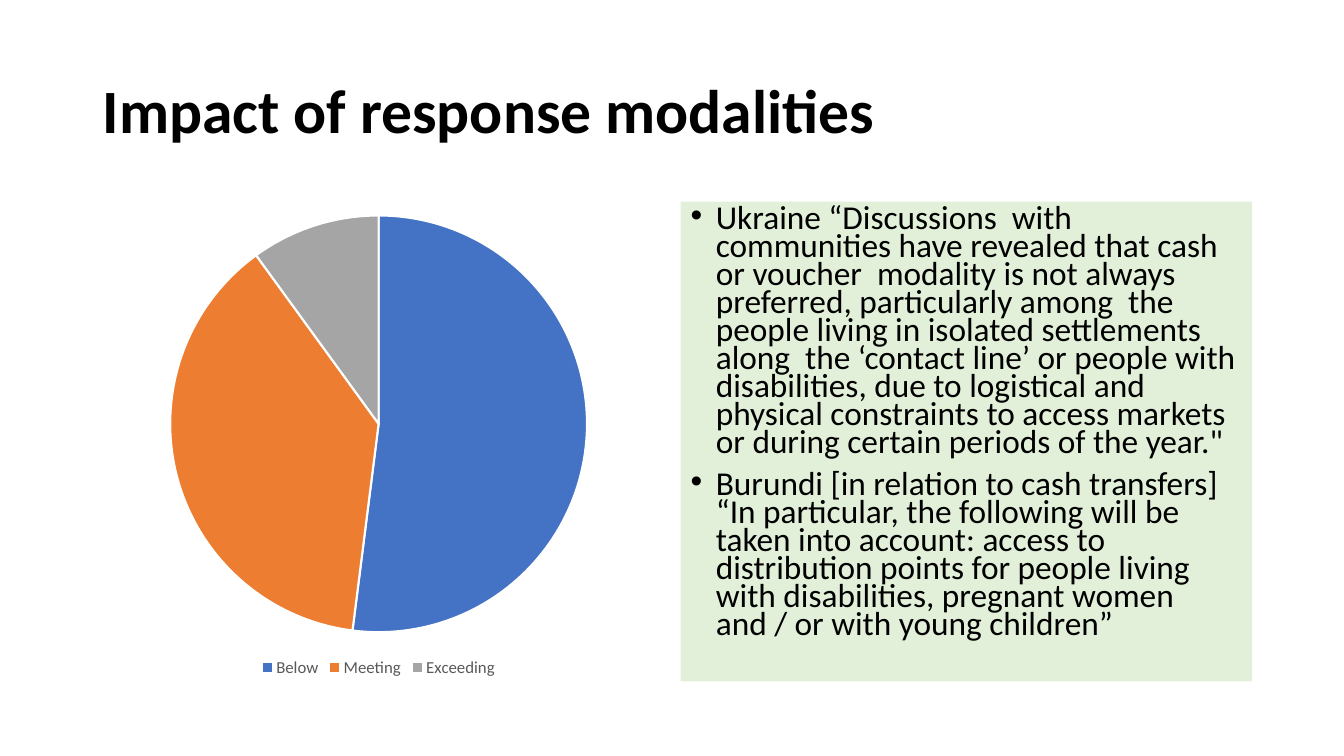
from lxml import etree
from pptx import Presentation
from pptx.chart.data import CategoryChartData
from pptx.dml.color import RGBColor
from pptx.enum.chart import XL_CHART_TYPE, XL_LEGEND_POSITION
from pptx.enum.text import MSO_ANCHOR, MSO_AUTO_SIZE, PP_ALIGN
from pptx.oxml.ns import qn
from pptx.util import Inches, Pt

PIE = XL_CHART_TYPE.PIE
BOTTOM = XL_LEGEND_POSITION.BOTTOM
MIDDLE = MSO_ANCHOR.MIDDLE
TOP = MSO_ANCHOR.TOP
NO_AUTOFIT = MSO_AUTO_SIZE.NONE
LEFT = PP_ALIGN.LEFT

BLACK = RGBColor(0x00, 0x00, 0x00)
WHITE = RGBColor(0xFF, 0xFF, 0xFF)
GREY_TEXT = RGBColor(0x59, 0x59, 0x59)
PALE_GREEN = RGBColor(0xE2, 0xF0, 0xD9)
BLUE = RGBColor(0x44, 0x72, 0xC4)
ORANGE = RGBColor(0xED, 0x7D, 0x31)
GREY = RGBColor(0xA5, 0xA5, 0xA5)
FONT = "Calibri"

RATINGS = [("Below", 52, BLUE), ("Meeting", 38, ORANGE), ("Exceeding", 10, GREY)]
QUOTES = [
    "Ukraine “Discussions  with communities have revealed that cash or voucher  modality "
    "is not always preferred, particularly among  the people living in isolated settlements "
    "along  the ‘contact line’ or people with disabilities, due to logistical and physical "
    "constraints to access markets  or during certain periods of the year.\"",
    "Burundi [in relation to cash transfers] “In particular, the following will be taken "
    "into account: access to distribution points for people living with disabilities, "
    "pregnant women and / or with young children”",
]


def place(shape, left, top, width, height):
    shape.left, shape.top = Inches(left), Inches(top)
    shape.width, shape.height = Inches(width), Inches(height)


def add_text(paragraph, text, size, spacing, bold):
    paragraph.alignment = LEFT
    paragraph.line_spacing = spacing
    run = paragraph.add_run()
    run.text = text
    run.font.name = FONT
    run.font.size = Pt(size)
    run.font.bold = bold
    run.font.color.rgb = BLACK


presentation = Presentation()
presentation.slide_width = Inches(13.33)
presentation.slide_height = Inches(7.5)
slide = presentation.slides.add_slide(presentation.slide_layouts[1])

title = slide.shapes.title
place(title, 0.92, 0.4, 11.5, 1.45)
title.text_frame.auto_size = NO_AUTOFIT
title.text_frame.vertical_anchor = MIDDLE
add_text(title.text_frame.paragraphs[0], "Impact of response modalities", 44, 0.9, True)

chart_data = CategoryChartData()
chart_data.categories = [name for name, value, color in RATINGS]
chart_data.add_series("Series 1", [value for name, value, color in RATINGS])
chart = slide.shapes.add_chart(
    PIE, Inches(0.92), Inches(2), Inches(5.67), Inches(4.76), chart_data
).chart
chart.has_title = False
chart.font.name = FONT
chart.font.size = Pt(10)
chart.font.color.rgb = BLACK
chart.has_legend = True
chart.legend.position = BOTTOM
chart.legend.include_in_layout = False
chart.legend.font.name = FONT
chart.legend.font.size = Pt(12)
chart.legend.font.color.rgb = GREY_TEXT
chart.plots[0].vary_by_categories = True
for index, (name, value, color) in enumerate(RATINGS):
    point = chart.plots[0].series[0].points[index]
    point.format.fill.solid()
    point.format.fill.fore_color.rgb = color
    point.format.line.color.rgb = WHITE
    point.format.line.width = Pt(1.5)

body = slide.placeholders[1]
place(body, 6.75, 2, 5.67, 4.76)
body.fill.solid()
body.fill.fore_color.rgb = PALE_GREEN
frame = body.text_frame
frame.auto_size = NO_AUTOFIT
frame.vertical_anchor = TOP
for index, quote in enumerate(QUOTES):
    paragraph = frame.add_paragraph() if index else frame.paragraphs[0]
    properties = paragraph._p.get_or_add_pPr()
    properties.set("marL", str(Inches(0.25)))
    properties.set("indent", str(-Inches(0.25)))
    etree.SubElement(properties, qn("a:buFont")).set("typeface", "Arial")
    etree.SubElement(properties, qn("a:buChar")).set("char", "•")
    paragraph.space_before = Pt(10 if index else 0)
    add_text(paragraph, quote, 23.8, 0.7, False)

presentation.save("out.pptx")
